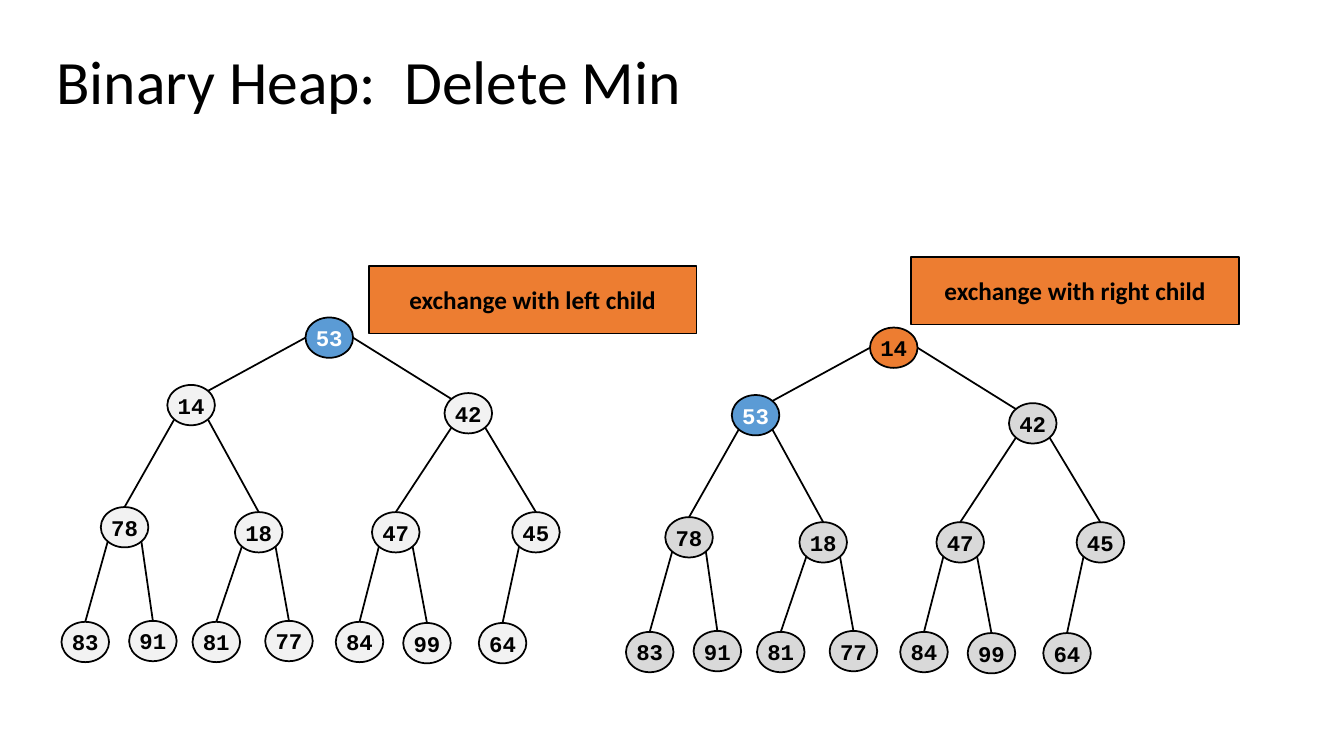
import math

import lxml.etree
import pptx
import pptx.dml.color
import pptx.enum.shapes
import pptx.enum.text
import pptx.oxml.ns
import pptx.util

Pt = pptx.util.Pt
SHAPES = pptx.enum.shapes.MSO_SHAPE
ALIGN = pptx.enum.text.PP_ALIGN

# Content: heap values in level order, so node i has children 2i+1 and 2i+2
TITLE = "Binary Heap:  Delete Min"
HEAPS = [
    {
        "values": [53, 14, 42, 78, 18, 47, 45, 83, 91, 81, 77, 84, 99, 64],
        "offset": (0, 0),
        "node_fill": "light",
        "special_fills": {0: "blue"},
        "callout": "exchange with left child",
        "callout_at": (263.5, 190),
    },
    {
        "values": [14, 53, 42, 78, 18, 47, 45, 83, 91, 81, 77, 84, 99, 64],
        "offset": (403.2, 7.2),
        "node_fill": "gray",
        "special_fills": {0: "orange", 1: "blue"},
        "callout": "exchange with right child",
        "callout_at": (650.9, 183.6),
    },
]
COLORS = {
    "black": "000000",
    "white": "FFFFFF",
    "light": "F2F2F2",
    "gray": "D9D9D9",
    "blue": "5B9BD5",
    "orange": "ED7D31",
}

# Left and top of each node, in level order
NODE_POSITIONS = [
    (218.2, 226.8),
    (119.5, 275), (317.5, 280.8),
    (72, 362.2), (167.8, 365.8), (265.7, 365.8), (365.8, 365.8),
    (43.9, 444.2), (92.2, 443.5), (137.5, 444.2), (189.4, 443.5),
    (239.8, 444.2), (288, 445), (342, 445),
]
NODE_W, NODE_H = 34, 28.8
CALLOUT_W, CALLOUT_H = 234, 48.2
LINE_WIDTH = 1.25

deck = pptx.Presentation()
deck.slide_width, deck.slide_height = Pt(960), Pt(540)
slide = deck.slides.add_slide(deck.slide_layouts[6])


def color(name):
    return pptx.dml.color.RGBColor.from_string(COLORS[name])


def write(shape, text, size, font="Calibri", ink="black", bold=False,
          align=ALIGN.CENTER, wrap=False, spacing=None):
    frame = shape.text_frame
    frame.word_wrap = wrap
    frame.vertical_anchor = pptx.enum.text.MSO_ANCHOR.MIDDLE
    paragraph = frame.paragraphs[0]
    paragraph.alignment = align
    paragraph.line_spacing = spacing
    run = paragraph.add_run()
    run.text = text
    run.font.size = Pt(size)
    run.font.name = font
    run.font.bold = bold
    run.font.color.rgb = color(ink)


def add_outlined(kind, left, top, width, height, fill):
    shape = slide.shapes.add_shape(kind, Pt(left), Pt(top), Pt(width), Pt(height))
    shape.shadow.inherit = False
    shape.fill.solid()
    shape.fill.fore_color.rgb = color(fill)
    shape.line.color.rgb = color("black")
    shape.line.width = Pt(LINE_WIDTH)
    return shape


def rim_point(position, degrees):
    """Point on a node's rim; 0 is right and 90 is down."""
    angle = math.radians(degrees)
    return (position[0] + NODE_W / 2 * (1 + math.cos(angle)),
            position[1] + NODE_H / 2 * (1 + math.sin(angle)))


def add_edge(start, end):
    edge = slide.shapes.add_connector(
        pptx.enum.shapes.MSO_CONNECTOR.STRAIGHT, *(Pt(v) for v in start + end))
    edge.line.color.rgb = color("black")
    edge.line.width = Pt(LINE_WIDTH)
    properties = edge._element.spPr
    lxml.etree.SubElement(properties, pptx.oxml.ns.qn("a:effectLst"))


def draw_heap(heap):
    dx, dy = heap["offset"]
    positions = [(x + dx, y + dy) for x, y in NODE_POSITIONS]

    # Edges leave the root sideways, other parents diagonally
    for child in range(1, len(positions)):
        parent = (child - 1) // 2
        is_left = child % 2 == 1
        if parent == 0:
            leave, arrive = (180, -45) if is_left else (0, -135)
        else:
            leave, arrive = (135 if is_left else 45), -90
        add_edge(rim_point(positions[parent], leave),
                 rim_point(positions[child], arrive))

    # Nodes
    for i, (value, (left, top)) in enumerate(zip(heap["values"], positions)):
        fill = heap["special_fills"].get(i, heap["node_fill"])
        node = add_outlined(SHAPES.OVAL, left, top, NODE_W, NODE_H, fill)
        write(node, str(value), 16, font="Courier New", bold=True,
              ink="white" if fill == "blue" else "black")

    # Callout
    callout = add_outlined(SHAPES.RECTANGLE, *heap["callout_at"],
                           CALLOUT_W, CALLOUT_H, "orange")
    write(callout, heap["callout"], 18, bold=True)


# Title
title = slide.shapes.add_textbox(Pt(33.1), Pt(17.3), Pt(777.6), Pt(85.7))
write(title, TITLE, 44, align=ALIGN.LEFT, wrap=True, spacing=0.9)

# Heaps before and after the first exchange
for heap in HEAPS:
    draw_heap(heap)

deck.save("out.pptx")
